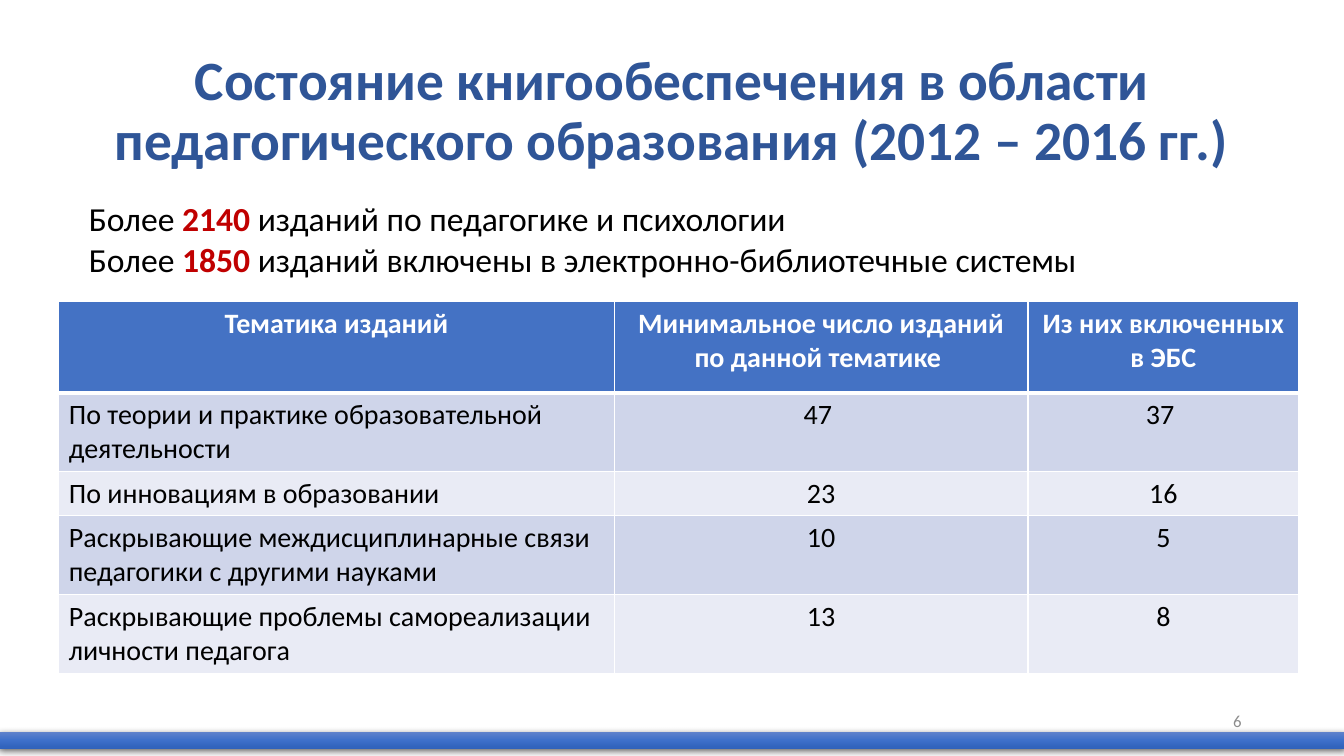
import copy
import dataclasses
import typing

import pptx
import pptx.dml.color
import pptx.enum.shapes
import pptx.enum.text
import pptx.oxml
import pptx.oxml.ns
import pptx.util

PX = 9525  # EMU in one px, 96 px to the inch
FONT = "Calibri"
COLORS = {
    "title": "2F5597", "text": "000000", "accent": "C00000", "number": "8C8C8C",
    "white": "FFFFFF", "header": "4472C4", "band_dark": "CFD5EA", "band_light": "E9EBF5",
    "bar_top": "6183CB", "bar_middle": "3E70CA", "bar_bottom": "3062BB",
}
ALIGN = pptx.enum.text.PP_ALIGN
ANCHOR = pptx.enum.text.MSO_ANCHOR


@dataclasses.dataclass(frozen=True)
class Box:
    left: int
    top: int
    width: int
    height: int

    def emu(self) -> dict[str, int]:
        return {name: value * PX for name, value in dataclasses.asdict(self).items()}


@dataclasses.dataclass(frozen=True)
class Style:
    size: float
    color: str
    bold: bool = False


@dataclasses.dataclass(frozen=True)
class Row:
    height: int
    texts: tuple[str, str, str]


TITLE_STYLE = Style(39.6, "title", True)
BODY_STYLE = Style(24, "text")
FIGURE_STYLE = Style(24, "accent", True)
NUMBER_STYLE = Style(12, "number")
HEADER_STYLE = Style(20, "white", True)
CELL_STYLE = Style(20, "text")

SUMMARY = [
    ("Более ", "2140", " изданий по педагогике и психологии"),
    ("Более ", "1850", " изданий включены в электронно-библиотечные системы"),
]
COLUMN_WIDTHS = [529, 394, 258]
ROWS = [
    Row(87, ("Тематика изданий", "Минимальное число изданий по данной тематике ",
             "Из них включенных в ЭБС")),
    Row(74, ("По теории и практике образовательной деятельности", "47 ", "37 ")),
    Row(41, ("По инновациям в образовании", "23", "16")),
    Row(74, ("Раскрывающие междисциплинарные связи педагогики с другими науками", "10", "5")),
    Row(74, ("Раскрывающие проблемы самореализации личности педагога", "13", "8")),
]


def rgb(color: str) -> pptx.dml.color.RGBColor:
    return pptx.dml.color.RGBColor.from_string(COLORS[color])


def apply(target: typing.Any, values: dict[str, typing.Any]) -> None:
    for name, value in values.items():
        setattr(target, name, value)


def add_run(paragraph: typing.Any, text: str, style: Style) -> None:
    run = paragraph.add_run()
    run.text = text
    apply(run.font, {"name": FONT, "size": pptx.util.Pt(style.size), "bold": style.bold})
    run.font.color.rgb = rgb(style.color)


def format_frame(shape: typing.Any, anchor: typing.Any) -> None:
    apply(shape.text_frame, {
        "word_wrap": True, "vertical_anchor": anchor,
        "auto_size": pptx.enum.text.MSO_AUTO_SIZE.NONE,
    })


def add_title(slide: typing.Any, box: Box, text: str) -> None:
    title = slide.shapes.title
    apply(title, box.emu())
    format_frame(title, ANCHOR.MIDDLE)
    paragraph = title.text_frame.paragraphs[0]
    apply(paragraph, {"alignment": ALIGN.CENTER, "line_spacing": 0.9})
    add_run(paragraph, text, TITLE_STYLE)


def add_summary(slide: typing.Any, box: Box) -> None:
    body = slide.placeholders[1]
    apply(body, box.emu())
    format_frame(body, ANCHOR.TOP)
    for index, parts in enumerate(SUMMARY):
        frame = body.text_frame
        paragraph = frame.add_paragraph() if index else frame.paragraphs[0]
        apply(paragraph, {"space_before": pptx.util.Pt(0), "line_spacing": 1.0})
        properties = paragraph._p.get_or_add_pPr()
        for name in ("marL", "indent"):
            properties.set(name, "0")
        pptx.oxml.ns.qn("a:buNone")
        properties.append(pptx.oxml.parse_xml(
            f'<a:buNone {pptx.oxml.ns.nsdecls("a")}/>'))
        for text, style in zip(parts, (BODY_STYLE, FIGURE_STYLE, BODY_STYLE)):
            add_run(paragraph, text, style)


def add_number(slide: typing.Any, box: Box, text: str) -> None:
    number = slide.shapes.add_textbox(**box.emu())
    format_frame(number, ANCHOR.MIDDLE)
    paragraph = number.text_frame.paragraphs[0]
    paragraph.alignment = ALIGN.RIGHT
    add_run(paragraph, text, NUMBER_STYLE)


def add_bar(slide: typing.Any, box: Box) -> None:
    bar = slide.shapes.add_shape(pptx.enum.shapes.MSO_SHAPE.RECTANGLE, **box.emu())
    bar.line.fill.background()
    bar.fill.gradient()
    bar.fill.gradient_angle = 270
    first_stop = bar._element.spPr.find(".//" + pptx.oxml.ns.qn("a:gs"))
    first_stop.addnext(copy.deepcopy(first_stop))
    colors = ("bar_top", "bar_middle", "bar_bottom")
    for index, (stop, color) in enumerate(zip(bar.fill.gradient_stops, colors)):
        stop.position = index / 2
        stop.color.rgb = rgb(color)
    # Soft shadow below the bar
    bar.shadow.inherit = False
    effects = bar._element.spPr.find(pptx.oxml.ns.qn("a:effectLst"))
    effects.append(pptx.oxml.parse_xml(
        f'<a:outerShdw {pptx.oxml.ns.nsdecls("a")} blurRad="57150" dist="19050" '
        f'dir="5400000" algn="ctr" rotWithShape="0"><a:srgbClr val="{COLORS["text"]}">'
        '<a:alpha val="63000"/></a:srgbClr></a:outerShdw>'))


def set_borders(cell: typing.Any, points: dict[str, int]) -> None:
    properties = cell._tc.get_or_add_tcPr()
    for index, (side, width) in enumerate(points.items()):
        properties.insert(index, pptx.oxml.parse_xml(
            f'<a:{side} {pptx.oxml.ns.nsdecls("a")} w="{pptx.util.Pt(width)}"><a:solidFill>'
            f'<a:srgbClr val="{COLORS["white"]}"/></a:solidFill></a:{side}>'))


def add_books_table(slide: typing.Any, left: int, top: int) -> None:
    box = Box(left, top, sum(COLUMN_WIDTHS), sum(row.height for row in ROWS))
    frame = slide.shapes.add_table(len(ROWS), len(COLUMN_WIDTHS), **box.emu())
    table = frame.table
    for column, width in zip(table.columns, COLUMN_WIDTHS):
        column.width = width * PX
    for row_index, row in enumerate(ROWS):
        table.rows[row_index].height = row.height * PX
        is_header = row_index == 0
        band = "band_dark" if row_index % 2 else "band_light"
        for column_index, text in enumerate(row.texts):
            cell = table.cell(row_index, column_index)
            cell.fill.solid()
            cell.fill.fore_color.rgb = rgb("header" if is_header else band)
            set_borders(cell, {"lnL": 1, "lnR": 1, "lnT": 3 if row_index == 1 else 1,
                               "lnB": 3 if is_header else 1})
            paragraph = cell.text_frame.paragraphs[0]
            centered = is_header or column_index > 0
            paragraph.alignment = ALIGN.CENTER if centered else ALIGN.LEFT
            add_run(paragraph, text, HEADER_STYLE if is_header else CELL_STYLE)


def main() -> None:
    presentation = pptx.Presentation()
    apply(presentation, {"slide_width": 1280 * PX, "slide_height": 720 * PX})
    slide = presentation.slides.add_slide(presentation.slide_layouts[1])

    # Heading and summary
    add_title(slide, Box(88, 38, 1104, 139),
              "Состояние книгообеспечения в области педагогического образования "
              "(2012 – 2016 гг.)")
    add_summary(slide, Box(75, 184, 1117, 87))

    # Footer
    add_number(slide, Box(904, 667, 288, 38), "6")
    add_bar(slide, Box(0, 697, 1280, 16))

    # Books by subject
    add_books_table(slide, 56, 287)

    presentation.save("out.pptx")


if __name__ == "__main__":
    main()
